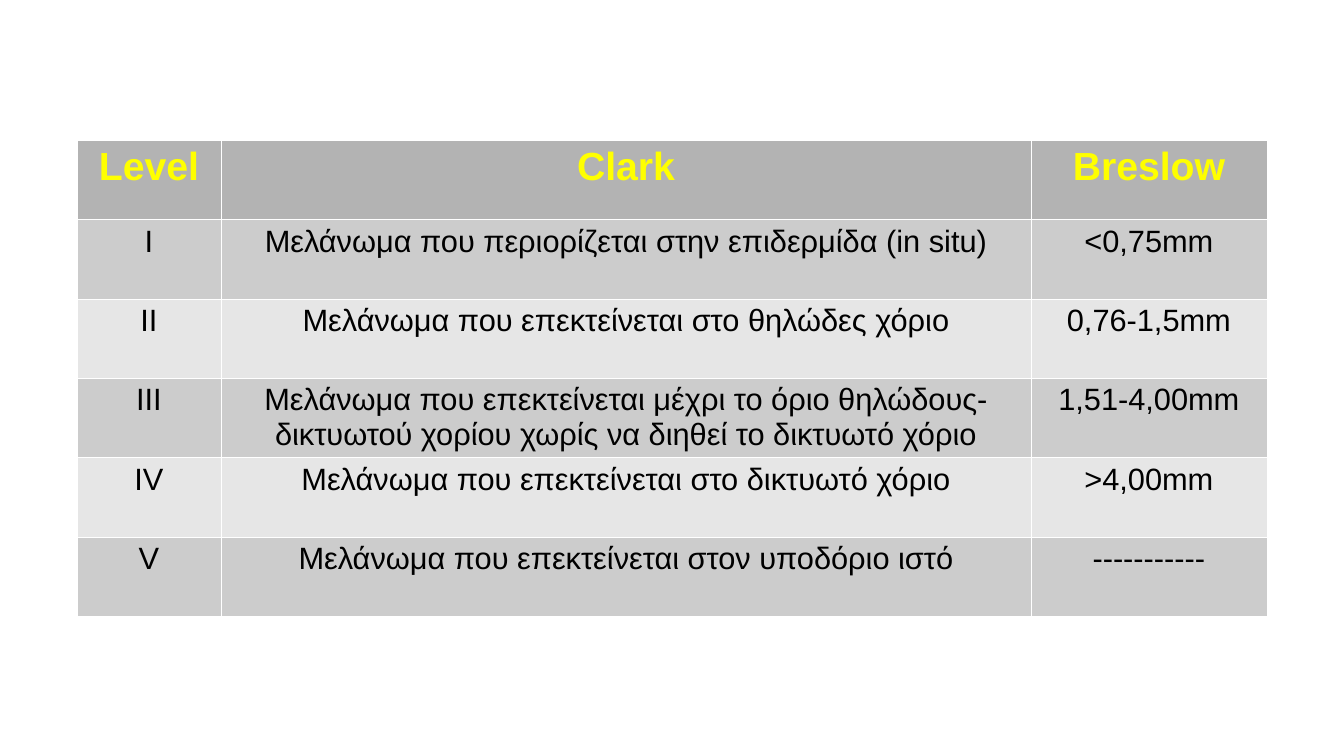
from lxml.etree import SubElement
from pptx import Presentation
from pptx.dml.color import RGBColor as RGB
from pptx.enum.text import PP_ALIGN as Align
from pptx.oxml.ns import qn
from pptx.util import Pt

SCALE = 914400 / 100.8
COLS = [144, 810, 236]
HEAD = ["Level", "Clark", "Breslow"]
STAGES = [
    ["I", "Μελάνωμα που περιορίζεται στην επιδερμίδα (in situ)", "<0,75mm"],
    ["II", "Μελάνωμα που επεκτείνεται στο θηλώδες χόριο", "0,76-1,5mm"],
    ["III", "Μελάνωμα που επεκτείνεται μέχρι το όριο θηλώδους-δικτυωτού "
     "χορίου χωρίς να διηθεί το δικτυωτό χόριο", "1,51-4,00mm"],
    ["IV", "Μελάνωμα που επεκτείνεται στο δικτυωτό χόριο", ">4,00mm"],
    ["V", "Μελάνωμα που επεκτείνεται στον υποδόριο ιστό", "-----------"],
]


def px(n):
    """Turn pixels into EMU."""
    return round(n * SCALE)


def paint(fill, color):
    """Give a fill one solid colour."""
    fill.solid()
    fill.fore_color.rgb = RGB.from_string(color)


def edge(cell, color):
    """Draw a hairline on the four sides of a cell."""
    props = cell._tc.get_or_add_tcPr()
    for side in "LRTB":
        line = SubElement(props, qn(f"a:ln{side}"), w="762")
        solid = SubElement(line, qn("a:solidFill"))
        SubElement(solid, qn("a:srgbClr"), val=color)


def write(cell, text, size, color, bold):
    """Put one centred run into a cell."""
    para = cell.text_frame.paragraphs[0]
    para.alignment = Align.CENTER
    run = para.add_run()
    run.text = text
    font = run.font
    font.name, font.size, font.bold = "Arial", Pt(size), bold
    font.color.rgb = RGB.from_string(color)


def add_grid(slide, left, top, height):
    """Add the table of melanoma levels."""
    rows = [HEAD] + STAGES
    frame = slide.shapes.add_table(len(rows), len(COLS), px(left), px(top),
                                   px(sum(COLS)), px(height))
    table = frame.table
    for col, width in zip(table.columns, COLS):
        col.width = px(width)
    for r, texts in enumerate(rows):
        shade = "CCCCCC" if r % 2 else "E6E6E6"
        look = (22, "000000", False)
        if r == 0:
            shade, look = "B3B3B3", (28, "FFFF00", True)
        for c, text in enumerate(texts):
            cell = table.cell(r, c)
            edge(cell, "FFFFFF")
            paint(cell.fill, shade)
            write(cell, text, *look)


def main():
    """Build the slide and save it."""
    deck = Presentation()
    deck.slide_width, deck.slide_height = px(1344), px(756)
    slide = deck.slides.add_slide(deck.slide_layouts[6])
    paint(slide.background.fill, "FFFFFF")
    add_grid(slide, 77, 140, 476)
    deck.save("out.pptx")


if __name__ == "__main__":
    main()
